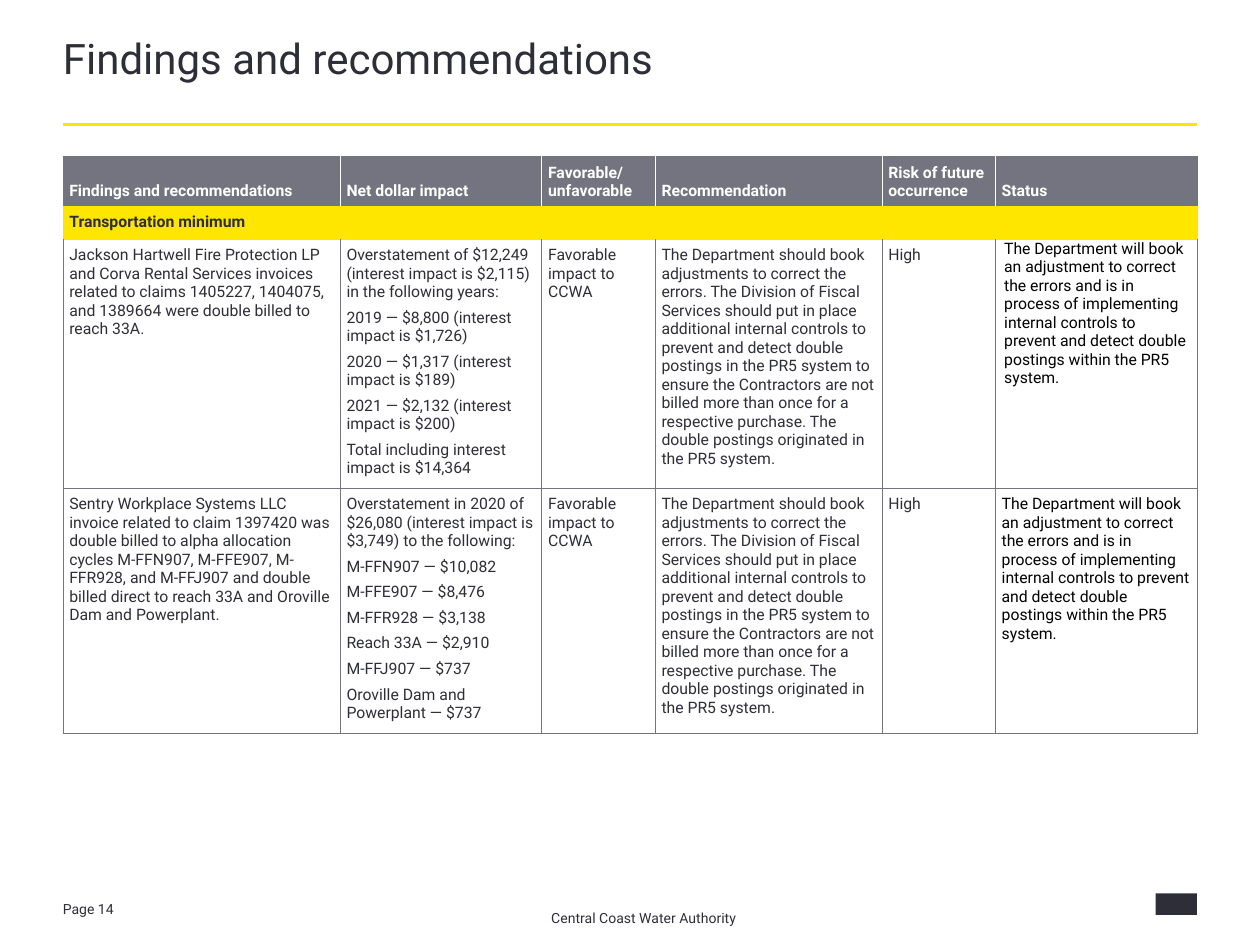
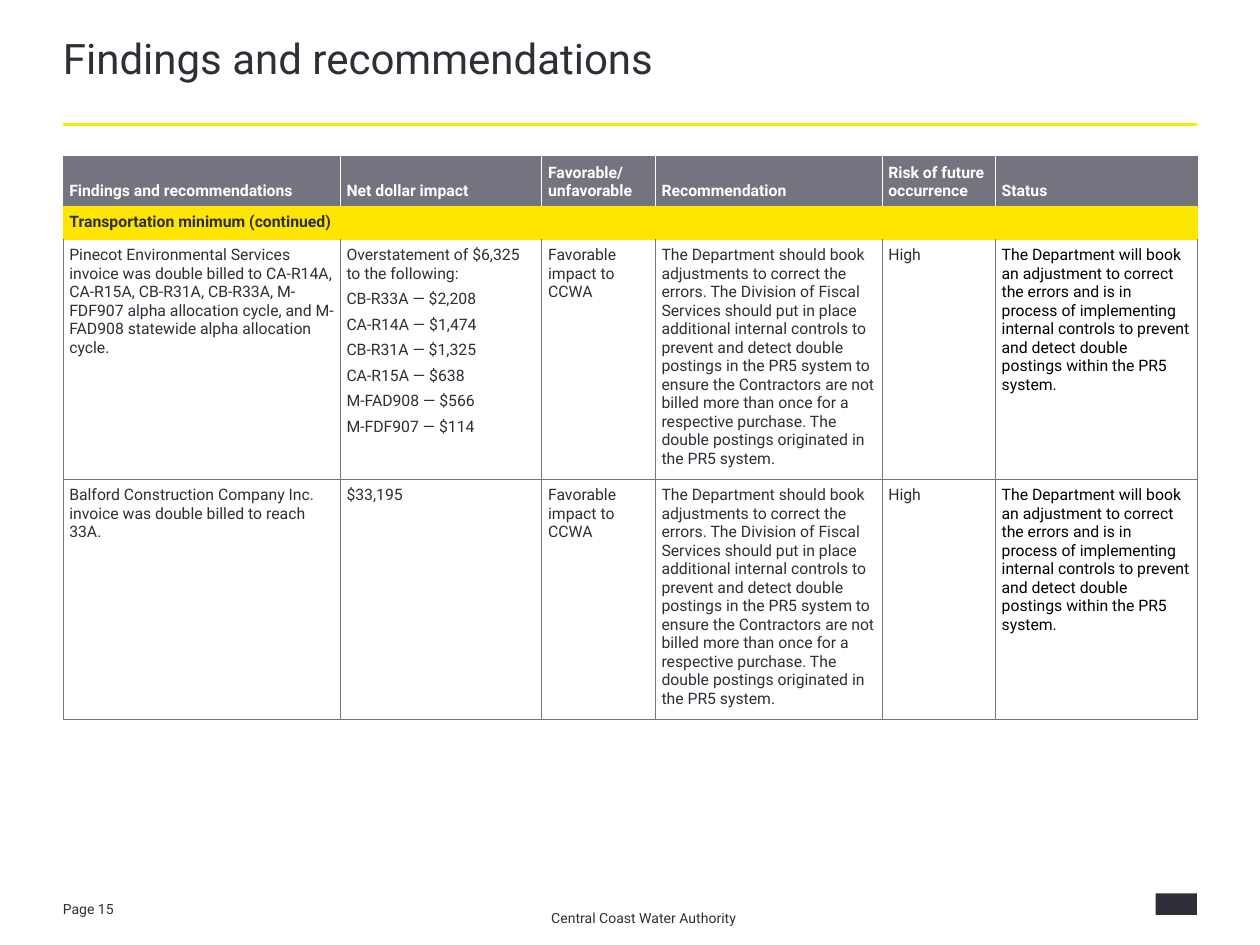
from collections import namedtuple

from lxml import etree
from pptx import Presentation
from pptx.dml.color import RGBColor
from pptx.enum import shapes, text
from pptx.oxml import ns
from pptx.util import Inches, Pt

WIDTH, HEIGHT = 10, 7.5
FONT = "Roboto"
INK, GREY, YELLOW, WHITE, BLACK = "2E2E38", "747480", "FFE600", "FFFFFF", "000000"

# Boxes in inches; parts are placed as shares of the box they belong to
Box = namedtuple("Box", "left top width height")
PAGE = Box(0, 0, WIDTH, HEIGHT)
HEADER = Box(0.5, 0.32, 9, 0.67)
BODY = Box(0.5, 1.24, 9, 4.87)
FOOTER = Box(0.4, 6.92, 9.1, 0.45)

COLUMN_SHARES = [22, 16, 9, 18, 9, 16]
HEADINGS = ["Findings and recommendations", "Net dollar impact", "Favorable/\vunfavorable",
            "Recommendation", "Risk of future occurrence", "Status"]
HEADING_HEIGHT, SECTION_HEIGHT = 0.4, 0.26
CELL_INSETS = (0.05, 0.05)
TIGHT_INSETS = (0.07, 0)

# Answers that every finding shares
EFFECT = "Favorable impact to CCWA"
RECOMMENDATION = (
    "The Department should book adjustments to correct the errors. The Division of Fiscal "
    "Services should put in place additional internal controls to prevent and detect double "
    "postings in the PR5 system to ensure the Contractors are not billed more than once for a "
    "respective purchase. The double postings originated in the PR5 system.")
RISK = "High"
STATUS = (
    "The Department will book an adjustment to correct the errors and is in process of "
    "implementing internal controls to prevent and detect double postings within the PR5 system.")

Finding = namedtuple("Finding", "issue impact height status_insets", defaults=[CELL_INSETS])
Page = namedtuple("Page", "number section findings")

PAGES = [
    Page(14, "Transportation minimum", [
        Finding(
            "Jackson Hartwell Fire Protection LP and Corva Rental Services invoices related to "
            "claims 1405227, 1404075, and 1389664 were double billed to reach 33A.",
            ["Overstatement of $12,249 (interest impact is $2,115) in the following years:",
             "2019 — $8,800 (interest impact is $1,726)",
             "2020 — $1,317 (interest impact is $189)",
             "2021 — $2,132 (interest impact is $200)",
             "Total including interest impact is $14,364"],
            1.94, TIGHT_INSETS),
        Finding(
            "Sentry Workplace Systems LLC invoice related to claim 1397420 was double billed to "
            "alpha allocation cycles M-FFN907, M-FFE907, M-FFR928, and M-FFJ907 and double billed "
            "direct to reach 33A and Oroville Dam and Powerplant.",
            ["Overstatement in 2020 of $26,080 (interest impact is $3,749) to the following:",
             "M-FFN907 — $10,082", "M-FFE907 — $8,476", "M-FFR928 — $3,138",
             "Reach 33A — $2,910", "M-FFJ907 — $737", "Oroville Dam and Powerplant — $737"],
            1.91),
    ]),
    Page(15, "Transportation minimum (continued)", [
        Finding(
            "Pinecot Environmental Services invoice was double billed to CA-R14A, CA-R15A, "
            "CB-R31A, CB-R33A, M-FDF907 alpha allocation cycle, and M-FAD908 statewide alpha "
            "allocation cycle.",
            ["Overstatement of $6,325 to the following:",
             "CB-R33A — $2,208", "CA-R14A — $1,474", "CB-R31A — $1,325",
             "CA-R15A — $638", "M-FAD908 — $566", "M-FDF907 — $114"],
            1.87),
        Finding("Balford Construction Company Inc. invoice was double billed to reach 33A.",
                ["$33,195"], 1.87),
    ]),
]


def color(value):
    return RGBColor.from_string(value)


def part(box, left, top, width, height):
    """Return the box that covers the given shares of another box."""
    return Box(box.left + left * box.width, box.top + top * box.height,
               width * box.width, height * box.height)


def emu(box):
    return [Inches(length) for length in box]


def write(frame, lines, size, ink, bold=False, before=0, after=0):
    """Fill a text frame with one paragraph per line."""
    frame.word_wrap = True
    for index, line in enumerate(lines):
        paragraph = frame.add_paragraph() if index else frame.paragraphs[0]
        paragraph.text = line
        paragraph.space_before, paragraph.space_after = Pt(before), Pt(after)
        font = paragraph.font
        font.name, font.size, font.bold = FONT, Pt(size), bold
        font.color.rgb = color(ink)


def add_label(slide, box, label):
    frame = slide.shapes.add_textbox(*emu(box)).text_frame
    frame.vertical_anchor = text.MSO_ANCHOR.MIDDLE
    write(frame, [label], 8, INK)


def add_header(slide, box):
    # Title
    frame = slide.shapes.add_textbox(*emu(part(box, 0, 0, 1, 0.97))).text_frame
    frame.margin_left = frame.margin_right = frame.margin_top = frame.margin_bottom = 0
    write(frame, ["Findings and recommendations"], 24, INK)
    frame.paragraphs[0].line_spacing = 0.85
    # Rule under the title
    left, bottom = Inches(box.left), Inches(box.top + box.height)
    rule = slide.shapes.add_connector(shapes.MSO_CONNECTOR.STRAIGHT, left, bottom,
                                      left + Inches(box.width), bottom)
    rule.line.color.rgb = color(YELLOW)
    rule.line.width = Pt(1.5)
    etree.SubElement(rule._element.spPr, ns.qn("a:effectLst"))


def add_footer(slide, box, number):
    add_label(slide, part(box, 0, 0.44, 0.08, 0.44), f"Page {number}")
    add_label(slide, part(box, 0.426, 0.62, 0.205, 0.38), "Central Coast Water Authority")
    # Plain corner mark
    mark = slide.shapes.add_shape(shapes.MSO_SHAPE.RECTANGLE,
                                  *emu(part(box, 0.964, 0.38, 0.036, 0.38)))
    mark.shadow.inherit = False
    mark.fill.solid()
    mark.fill.fore_color.rgb = color(INK)
    mark.line.fill.background()


def set_borders(cell, left, right, top, bottom):
    properties = cell._tc.get_or_add_tcPr()
    for side, value in zip("LRTB", (left, right, top, bottom)):
        line = etree.SubElement(properties, ns.qn(f"a:ln{side}"), w=str(Pt(0.5)))
        fill = etree.SubElement(line, ns.qn("a:solidFill"))
        etree.SubElement(fill, ns.qn("a:srgbClr"), val=value)


def style_cell(cell, borders, fill=None, insets=CELL_INSETS):
    set_borders(cell, *borders)
    if fill:
        cell.fill.solid()
        cell.fill.fore_color.rgb = color(fill)
    else:
        cell.fill.background()
    cell.margin_left = cell.margin_right = Inches(insets[0])
    cell.margin_top = cell.margin_bottom = Inches(insets[1])


def add_findings_table(slide, box, page):
    heights = [HEADING_HEIGHT, SECTION_HEIGHT] + [finding.height for finding in page.findings]
    frame = slide.shapes.add_table(len(heights), len(HEADINGS),
                                   *emu(box._replace(height=sum(heights))))
    table = frame.table
    table.horz_banding = False
    for row, height in zip(table.rows, heights):
        row.height = Inches(height)
    for column, share in zip(table.columns, COLUMN_SHARES):
        column.width = Inches(box.width * share / sum(COLUMN_SHARES))
    last = len(HEADINGS) - 1

    # Heading row
    for index, heading in enumerate(HEADINGS):
        cell = table.cell(0, index)
        style_cell(cell, (WHITE if index else GREY, WHITE if index < last else GREY,
                          GREY, YELLOW), GREY)
        cell.vertical_anchor = text.MSO_ANCHOR.BOTTOM
        write(cell.text_frame, [heading], 9, WHITE, bold=True)

    # Section band
    for index in range(len(HEADINGS)):
        style_cell(table.cell(1, index), [YELLOW] * 4, YELLOW)
    table.cell(1, 0).merge(table.cell(1, last))
    write(table.cell(1, 0).text_frame, [page.section], 9, INK, bold=True)

    # Findings
    for row, finding in enumerate(page.findings, start=2):
        answers = [[finding.issue], finding.impact, [EFFECT], [RECOMMENDATION], [RISK], [STATUS]]
        top = YELLOW if row == 2 else GREY
        for index, lines in enumerate(answers):
            is_status = index == last
            cell = table.cell(row, index)
            style_cell(cell, (GREY, GREY, top, GREY),
                       insets=finding.status_insets if is_status else CELL_INSETS)
            write(cell.text_frame, lines, 9, BLACK if is_status else INK,
                  before=2, after=0 if is_status else 2)


def add_findings_slide(presentation, page):
    slide = presentation.slides.add_slide(presentation.slide_layouts[6])
    add_footer(slide, FOOTER, page.number)
    add_header(slide, HEADER)
    add_findings_table(slide, BODY, page)


def main():
    presentation = Presentation()
    presentation.slide_width, presentation.slide_height = Inches(PAGE.width), Inches(PAGE.height)
    for page in PAGES:
        add_findings_slide(presentation, page)
    presentation.save("out.pptx")


if __name__ == "__main__":
    main()
